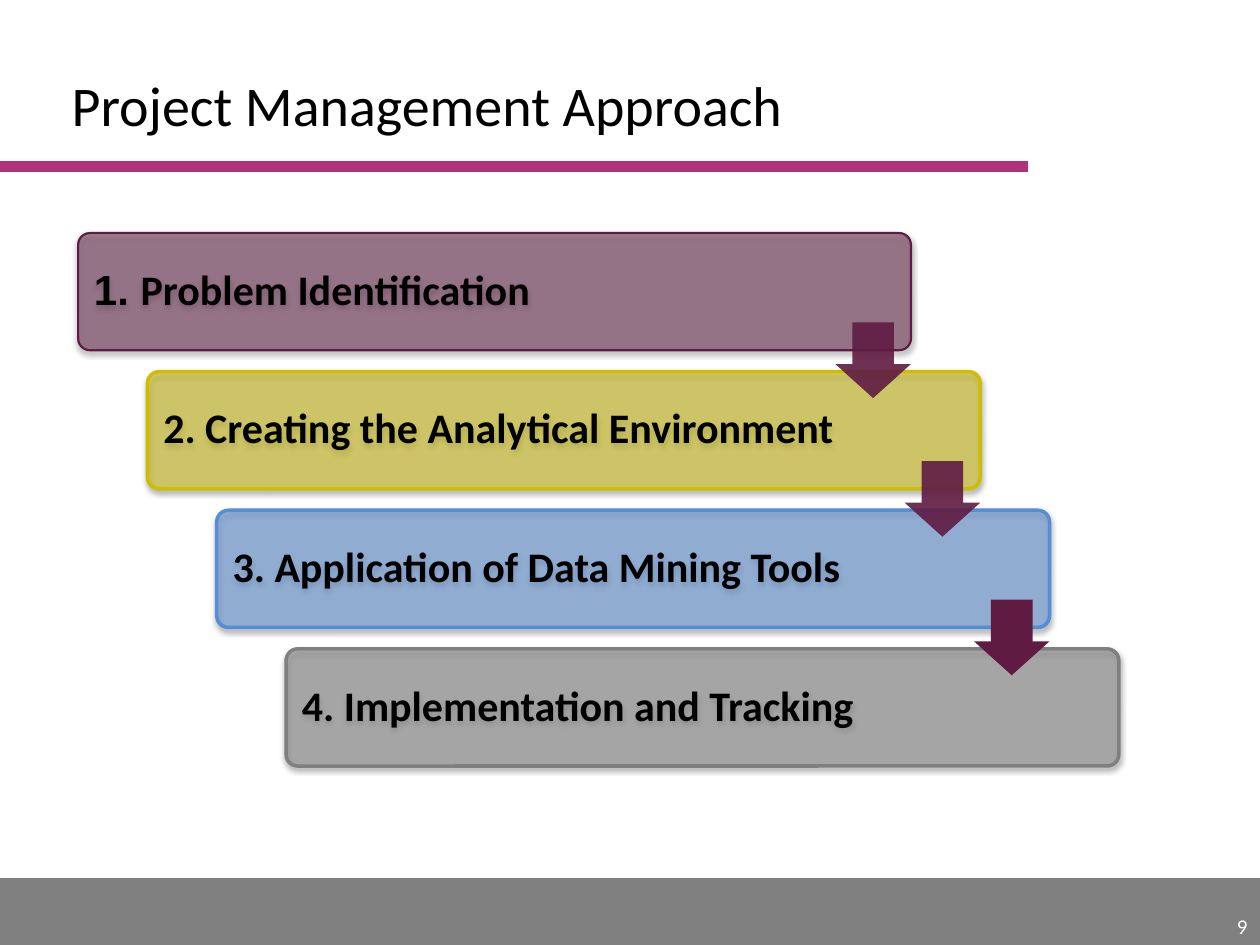
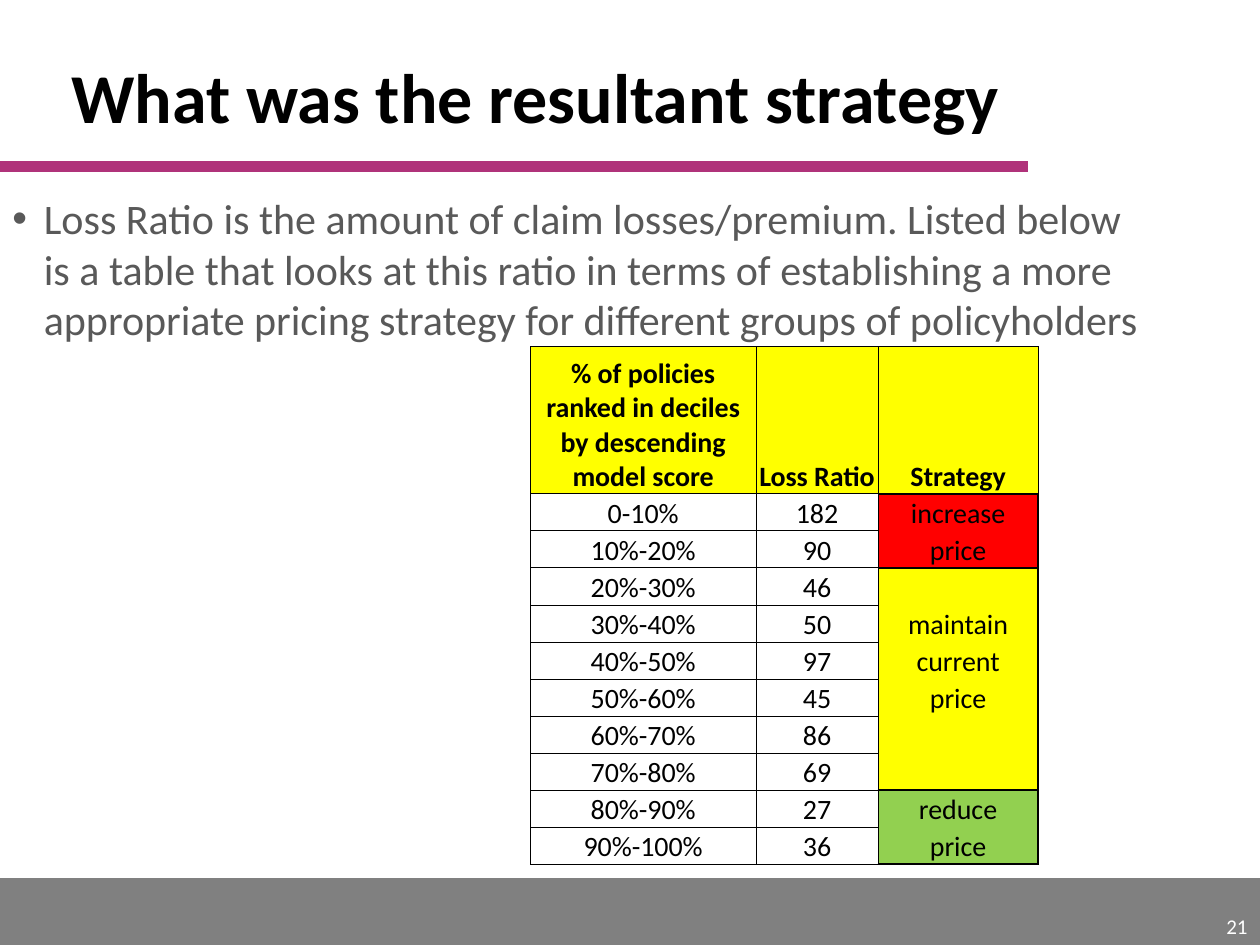
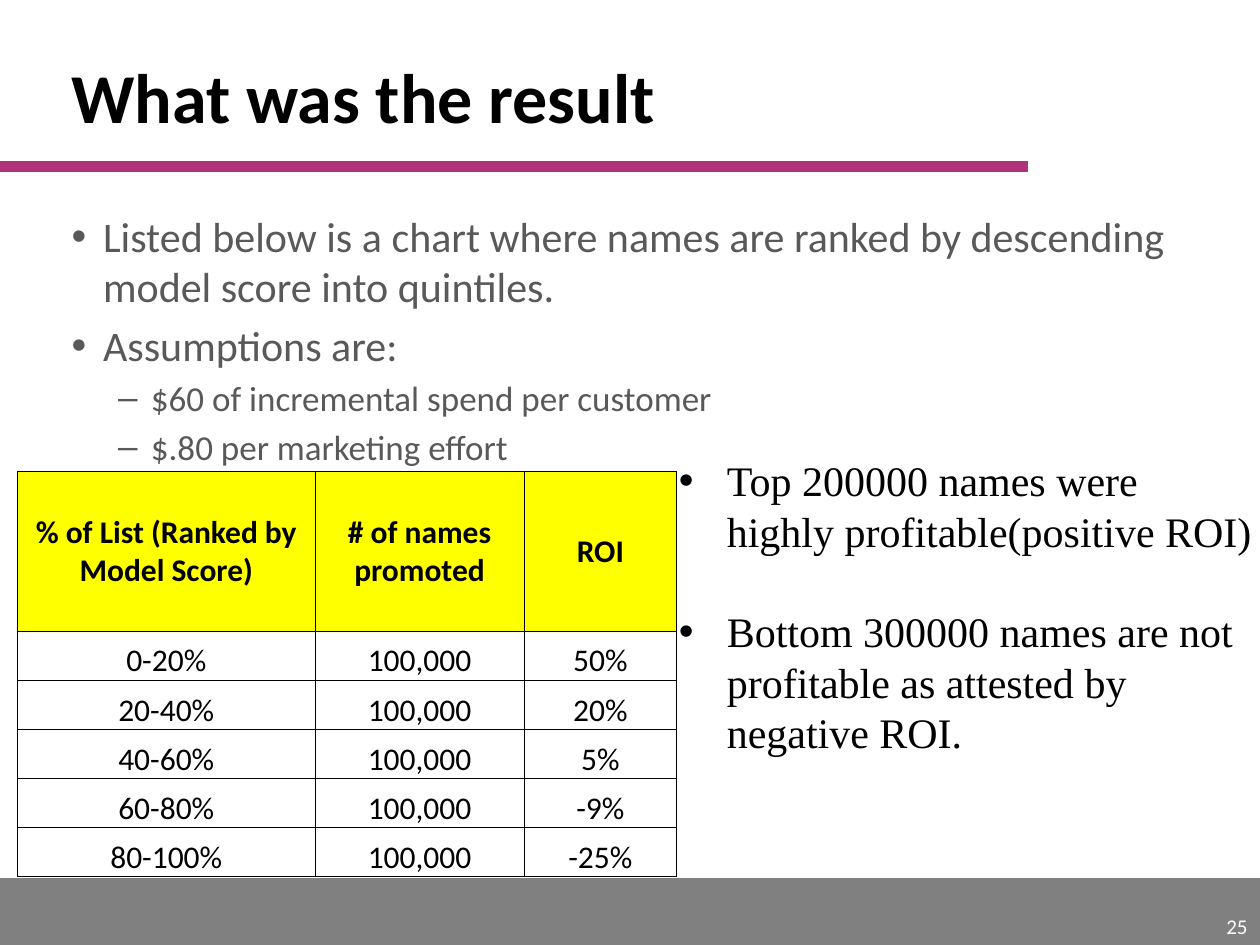
import pptx
import pptx.dml.color
import pptx.enum.shapes
import pptx.enum.text
import pptx.oxml.ns
import pptx.util
from lxml import etree

Inches = pptx.util.Inches
Pt = pptx.util.Pt
Shape = pptx.enum.shapes.MSO_SHAPE
Anchor = pptx.enum.text.MSO_ANCHOR
Align = pptx.enum.text.PP_ALIGN

BLACK, WHITE, GREY, BODY = "000000", "FFFFFF", "808080", "595959"
PINK, PLUM, YELLOW, RED, GREEN = "B0327A", "5F1B42", "FFFF00", "FF0000", "92D050"

STEPS = [
    ([("1. ", "Arial"), ("Problem Identification", "Calibri")], PLUM, 1.25),
    ([("2. Creating the Analytical Environment", "Calibri")], "CCBD00", 2),
    ([("3. Application of Data Mining Tools", "Calibri")], "558ED5", 2),
    ([("4. Implementation and Tracking", "Calibri")], "7F7F7F", 2),
]
LOSS_ROWS = [
    ("% of policies ranked in deciles by descending model score", "Loss Ratio", "Strategy"),
    ("0-10%", "182", "increase"),
    ("10%-20%", "90", "price"),
    ("20%-30%", "46", ""),
    ("30%-40%", "50", "maintain"),
    ("40%-50%", "97", "current"),
    ("50%-60%", "45", "price"),
    ("60%-70%", "86", ""),
    ("70%-80%", "69", ""),
    ("80%-90%", "27", "reduce"),
    ("90%-100%", "36", "price"),
]
STRATEGY_FILLS = [RED] * 2 + [YELLOW] * 6 + [GREEN] * 2
ROI_ROWS = [
    ("% of List (Ranked by Model Score)", "# of names promoted", "ROI"),
    ("0-20%", "100,000", "50%"),
    ("20-40%", "100,000", "20%"),
    ("40-60%", "100,000", "5%"),
    ("60-80%", "100,000", "-9%"),
    ("80-100%", "100,000", "-25%"),
]


def rgb(code):
    """Return the colour for a hex string."""
    return pptx.dml.color.RGBColor.from_string(code)


def apply(target, formats):
    """Set each named attribute on the target."""
    for name, value in formats.items():
        setattr(target, name, value)


def add_node(parent, tag, **attributes):
    """Append a drawing element with attributes to a parent element."""
    node = etree.SubElement(parent, pptx.oxml.ns.qn(tag))
    for name, value in attributes.items():
        node.set(name, str(value))
    return node


def add_span(para, text, size, color, font="Calibri", bold=False):
    """Add formatted text to a paragraph, with line breaks at newlines."""
    for number, line in enumerate(text.split("\n")):
        if number:
            para.add_line_break()
        span = para.add_run()
        span.text = line
        apply(span.font, {"size": Pt(size), "name": font, "bold": bold})
        span.font.color.rgb = rgb(color)


def add_text_box(page, place, anchor=Anchor.TOP):
    """Add an empty wrapping text box and return its frame."""
    frame = page.shapes.add_textbox(*map(Inches, place)).text_frame
    apply(frame, {"word_wrap": True, "vertical_anchor": anchor})
    return frame


def add_bullets(page, place, items, color=BODY, font="Calibri", **formats):
    """Add a list of (text, size, level, space before) items with bullets."""
    frame = add_text_box(page, place)
    for number, (text, size, level, gap) in enumerate(items):
        para = frame.add_paragraph() if number else frame.paragraphs[0]
        mark, margin, hang = [("•", 0.25, 0.25), ("–", 0.63, 0.26)][level]
        if font != "Calibri":
            margin = hang = 0.38
        props = para._p.get_or_add_pPr()
        props.set("marL", str(Inches(margin)))
        props.set("indent", str(-Inches(hang)))
        add_node(props, "a:buFont", typeface="Arial")
        add_node(props, "a:buChar", char=mark)
        apply(para, {"level": level, "space_before": Pt(gap), **formats})
        add_span(para, text, size, color, font)


def add_block(page, kind, place, fill, opacity=100, line=None):
    """Add a preset shape with a plain fill, and a line of its colour if asked."""
    block = page.shapes.add_shape(kind, *map(Inches, place))
    block.shadow.inherit = False
    block.fill.solid()
    block.fill.fore_color.rgb = rgb(fill)
    if opacity < 100:
        color = block._element.spPr.find(".//" + pptx.oxml.ns.qn("a:srgbClr"))
        add_node(color, "a:alpha", val=opacity * 1000)
    if line:
        block.line.color.rgb = rgb(fill)
        block.line.width = Pt(line)
    else:
        block.line.fill.background()
    return block


def add_step(page, place, spans, color, line):
    """Add a rounded, shaded step box with its label."""
    box = add_block(page, Shape.ROUNDED_RECTANGLE, place, color, 50, line)
    box.adjustments[0] = 0.1
    effects = box._element.spPr.find(pptx.oxml.ns.qn("a:effectLst"))
    shadow = add_node(effects, "a:outerShdw", blurRad=Pt(3.1), dist=Pt(1.6),
                      dir=5400000, rotWithShape=0)
    add_node(add_node(shadow, "a:srgbClr", val=BLACK), "a:alpha", val=38000)
    frame = box.text_frame
    apply(frame, {"word_wrap": True, "vertical_anchor": Anchor.MIDDLE,
                  "margin_left": Inches(0.1), "margin_right": Inches(1.12)})
    para = frame.paragraphs[0]
    apply(para, {"alignment": Align.LEFT, "line_spacing": 0.9})
    for text, font in spans:
        add_span(para, text, 24, BLACK, font, True)


def set_border(cell, position, side, width):
    """Draw one side of a cell, or clear it when the width is zero."""
    props = cell._tc.get_or_add_tcPr()
    line = add_node(props, side, w=Pt(width))
    if width:
        add_node(add_node(line, "a:solidFill"), "a:srgbClr", val=BLACK)
    else:
        add_node(line, "a:noFill")
    props.insert(position, line)


def add_grid(page, corner, widths, heights, rows, size, fills, header_anchor):
    """Add a table; equal filled cells one above another share no border."""
    place = (*corner, sum(widths), sum(heights))
    table = page.shapes.add_table(len(rows), len(widths), *map(Inches, place)).table
    apply(table, {"first_row": False, "horz_banding": False})
    for column, width in zip(table.columns, widths):
        column.width = Inches(width)
    for row, height in zip(table.rows, heights):
        row.height = Inches(height)
    for row, texts in enumerate(rows):
        for column, text in enumerate(texts):
            cell = table.cell(row, column)
            apply(cell, {"margin_left": Inches(0.01), "margin_right": Inches(0.01),
                         "margin_top": Inches(0.01), "margin_bottom": 0,
                         "vertical_anchor": Anchor.BOTTOM if row else header_anchor})
            para = cell.text_frame.paragraphs[0]
            para.alignment = Align.CENTER
            if text:
                add_span(para, text, size, BLACK, bold=row == 0)
            else:
                para._p.get_or_add_endParaRPr().set("sz", str(size * 100))
            shade = fills.get((row, column))
            if shade:
                cell.fill.solid()
                cell.fill.fore_color.rgb = rgb(shade)
            else:
                cell.fill.background()
            edge = 1 if row and shade else 0.5
            above, below = (shade and shade == fills.get((row + step, column))
                            for step in (-1, 1))
            borders = {"a:lnL": 0.5, "a:lnR": edge,
                       "a:lnT": 0 if above else edge, "a:lnB": 0 if below else edge}
            for position, (side, width) in enumerate(borders.items()):
                set_border(cell, position, side, width)


def add_page(deck, title, number, size=40, bold=True):
    """Add a slide with footer band, title rule, title and page number."""
    page = deck.slides.add_slide(deck.slide_layouts[6])
    add_block(page, Shape.RECTANGLE, (0, 6.97, 10, 0.53), GREY, line=0.75)
    rule = page.shapes.add_connector(pptx.enum.shapes.MSO_CONNECTOR.STRAIGHT,
                                     *map(Inches, (0, 1.32, 8.16, 1.32)))
    rule.line.color.rgb = rgb(PINK)
    rule.line.width = Pt(6)
    add_node(rule._element.spPr, "a:effectLst")
    heading = add_text_box(page, (0.47, 0.23, 7.65, 0.91), Anchor.BOTTOM)
    add_span(heading.paragraphs[0], title, size, BLACK, bold=bold)
    footer = add_text_box(page, (7.92, 7.18, 2.08, 0.32), Anchor.BOTTOM)
    footer.paragraphs[0].alignment = Align.RIGHT
    add_span(footer.paragraphs[0], number, 12, WHITE)
    return page


def add_approach(deck):
    """Build the staircase of project steps."""
    page = add_page(deck, "Project Management Approach", "9", 32, False)
    for index, (spans, color, line) in enumerate(STEPS):
        place = (0.62 + 0.55 * index, 1.85 + 1.1 * index, 6.61, 0.93)
        add_step(page, place, spans, color, line)
    for index, opacity in enumerate((90, 90, 100)):
        place = (6.63 + 0.55 * index, 2.56 + 1.1 * index, 0.6, 0.6)
        arrow = add_block(page, Shape.DOWN_ARROW, place, PLUM, opacity)
        arrow.adjustments[0], arrow.adjustments[1] = 0.55, 0.45


def add_strategy(deck):
    """Build the loss ratio table with its pricing strategy."""
    page = add_page(deck, "What was the resultant strategy", "21")
    add_bullets(page, (0, 1.48, 9.17, 5.37), [
        ("Loss Ratio is the amount of claim losses/premium. Listed below is a table "
         "that looks at this ratio in terms of establishing a more appropriate "
         "pricing strategy for different groups of policyholders", 24, 0, 0)])
    fills = {(0, column): YELLOW for column in range(3)}
    fills.update({(row, 2): fill for row, fill in enumerate(STRATEGY_FILLS, 1)})
    heights = [1.17] + [0.294] * 10
    add_grid(page, (4.21, 2.75), [1.79, 0.97, 1.27], heights, LOSS_ROWS, 16, fills,
             Anchor.BOTTOM)


def add_result(deck):
    """Build the return table with its assumptions and findings."""
    page = add_page(deck, "What was the result", "25")
    add_bullets(page, (0.47, 1.62, 9.17, 5.22), [
        ("Listed below is a chart where names are ranked by descending model score "
         "into quintiles.", 24, 0, 0),
        ("Assumptions are:", 24, 0, 4.8),
        ("$60 of incremental spend per customer", 20, 1, 4),
        ("$.80 per marketing effort", 20, 1, 4)])
    fills = {(0, column): YELLOW for column in range(3)}
    add_grid(page, (0.14, 3.74), [2.36, 1.66, 1.21], [1.27] + [0.39] * 5, ROI_ROWS, 18,
             fills, Anchor.MIDDLE)
    add_bullets(page, (5.29, 3.56, 4.87, 2.52), [
        ("Top 200000 names were\nhighly profitable(positive ROI)", 24, 0, 0),
        ("Bottom 300000 names are not\nprofitable as attested by\nnegative ROI.",
         24, 0, 28.8)], BLACK, "Times New Roman", line_spacing=Pt(28.8))


def main():
    """Build the three slides and save the deck."""
    deck = pptx.Presentation()
    apply(deck, {"slide_width": Inches(10), "slide_height": Inches(7.5)})
    add_approach(deck)
    add_strategy(deck)
    add_result(deck)
    deck.save("out.pptx")


if __name__ == "__main__":
    main()
